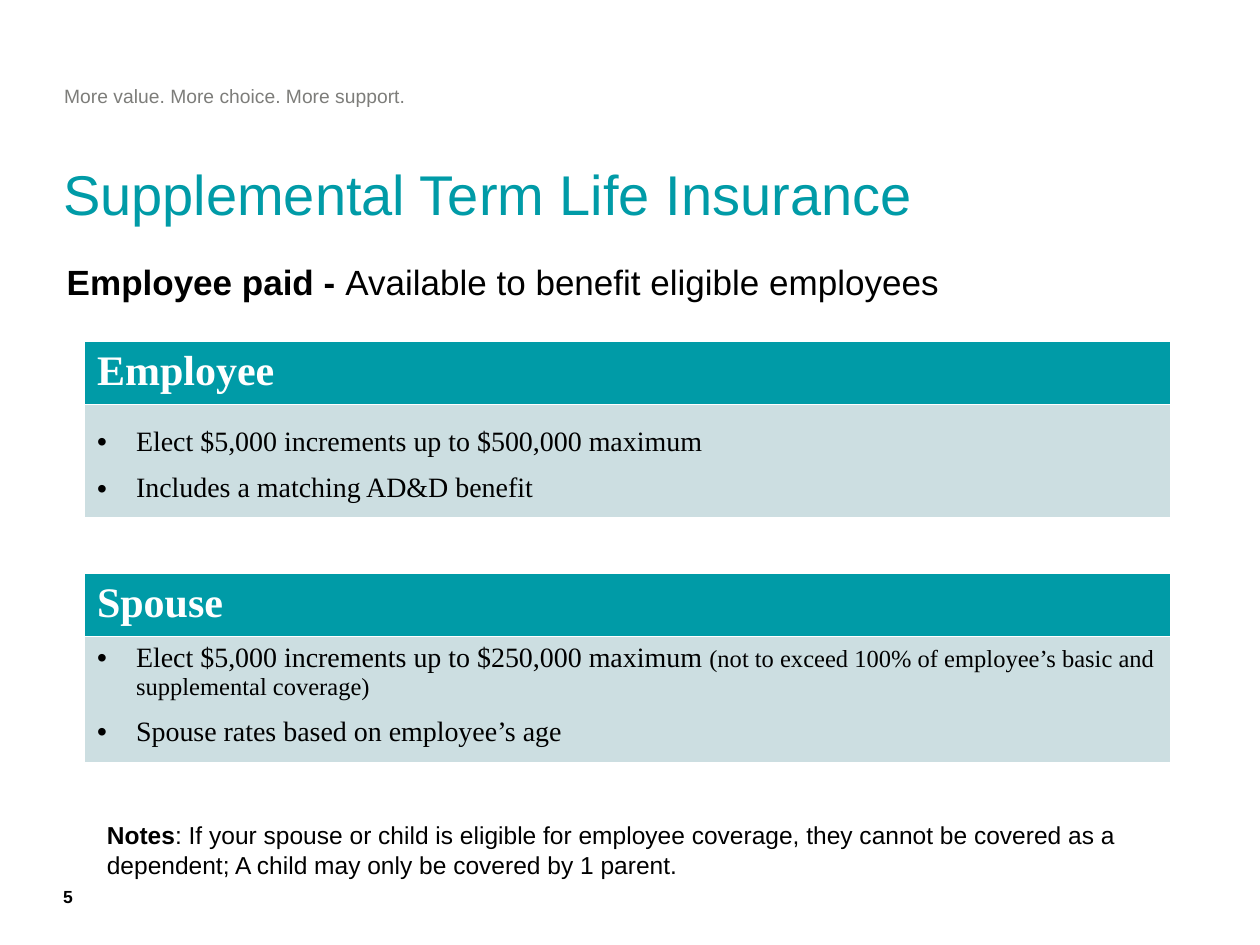
from lxml import etree
from pptx import Presentation
from pptx.dml.color import RGBColor
from pptx.enum.text import MSO_ANCHOR, MSO_AUTO_SIZE, PP_ALIGN
from pptx.oxml.ns import qn
from pptx.util import Inches, Pt

LEFT, TOP, FIXED = PP_ALIGN.LEFT, MSO_ANCHOR.TOP, MSO_AUTO_SIZE.NONE
TEAL, PALE, GREY, BLACK, WHITE = "009BA7", "CCDEE1", "7D7D7A", "000000", "FFFFFF"
SANS, SERIF = "Arial", "Times New Roman"


def paint(target, color):
    """Give a font or a cell a solid colour."""
    target.fill.solid()
    target.fill.fore_color.rgb = RGBColor.from_string(color)


def write(par, runs, size, color=BLACK, face=SANS, bold=None):
    """Fill a paragraph with (text, bold, size) runs; None keeps the default."""
    font = par.font
    font.name, font.size, font.bold = face, Pt(size), bold
    paint(font, color)
    for text, heavy, pts in runs:
        run = par.add_run()
        run.text = text
        if heavy is not None:
            run.font.bold = heavy
        if pts:
            run.font.size = Pt(pts)


prs = Presentation()
prs.slide_width, prs.slide_height = Inches(10), Inches(7.5)
slide = prs.slides.add_slide(prs.slide_layouts[5])

# Title
title = slide.shapes.title
title.left, title.top, title.width, title.height = map(Inches, (0.5, 1.33, 9, 0.5))
frame = title.text_frame
frame.margin_left = frame.margin_top = frame.margin_right = frame.margin_bottom = 0
frame.vertical_anchor, frame.auto_size = TOP, FIXED
par = frame.paragraphs[0]
par.alignment, par.line_spacing = LEFT, 0.9
write(par, [("Supplemental Term Life Insurance", None, None)], 32, TEAL)

# Text boxes: place, margins (left, top, right, bottom), runs, size, colour
boxes = [
    ((0.51, 0.62, 4.96, 0.29), (0, 0.05, 0.1, 0.05),
     [("More value. More choice. More support.", None, None)], 11, GREY),
    ((0.53, 2.07, 9, 0.51), (0, 0, 0, 0),
     [("Employee paid - ", True, None),
      ("Available to benefit eligible employees", None, None)], 20, BLACK),
    ((0.75, 6.46, 8.46, 0.81), (0.1, 0.05, 0.1, 0.05),
     [("Notes", True, None),
      (": If your spouse or child is eligible for employee coverage, they cannot "
       "be covered as a dependent; A child may only be covered by 1 parent.",
       None, None)], 14, BLACK),
    ((0.5, 7, 0.92, 0.5), (0, 0.03, 0, 0.1), [("5", True, None)], 10, BLACK),
]
for place, pad, runs, size, color in boxes:
    frame = slide.shapes.add_textbox(*map(Inches, place)).text_frame
    frame.word_wrap = True
    (frame.margin_left, frame.margin_top,
     frame.margin_right, frame.margin_bottom) = map(Inches, pad)
    write(frame.paragraphs[0], runs, size, color)

# Benefit tables: top, body height, heading, bullets (line spacing, runs)
plans = [
    (2.71, 0.89, "Employee", [
        (1.5, [("Elect $5,000 increments up to $500,000 maximum", None, None)]),
        (1.5, [("Includes a matching AD&D benefit", None, None)]),
    ]),
    (4.55, 0.98, "Spouse", [
        (1, [("Elect $5,000 increments up to $250,000 maximum ", None, None),
             ("(not to exceed 100% of employee’s basic and supplemental coverage)",
              None, 14)]),
        (1.5, [("Spouse rates based on employee’s age", None, None)]),
    ]),
]
HEAD = 0.5
for top, deep, name, items in plans:
    place = map(Inches, (0.67, top, 8.62, HEAD + deep))
    table = slide.shapes.add_table(2, 1, *place).table
    table.rows[0].height, table.rows[1].height = Inches(HEAD), Inches(deep)
    head, body = table.cell(0, 0), table.cell(1, 0)
    paint(head, TEAL)
    paint(body, PALE)
    write(head.text_frame.paragraphs[0], [(name, None, None)], 24, WHITE, SERIF, True)
    frame = body.text_frame
    for i, (gap, runs) in enumerate(items):
        par = frame.add_paragraph() if i else frame.paragraphs[0]
        par.line_spacing = gap
        props = par._p.get_or_add_pPr()
        props.set("marL", str(Inches(0.31)))
        props.set("indent", str(-Inches(0.31)))
        etree.SubElement(props, qn("a:buFont"), typeface=SANS)
        etree.SubElement(props, qn("a:buChar"), char="•")
        write(par, runs, 16, BLACK, SERIF)

prs.save("out.pptx")
